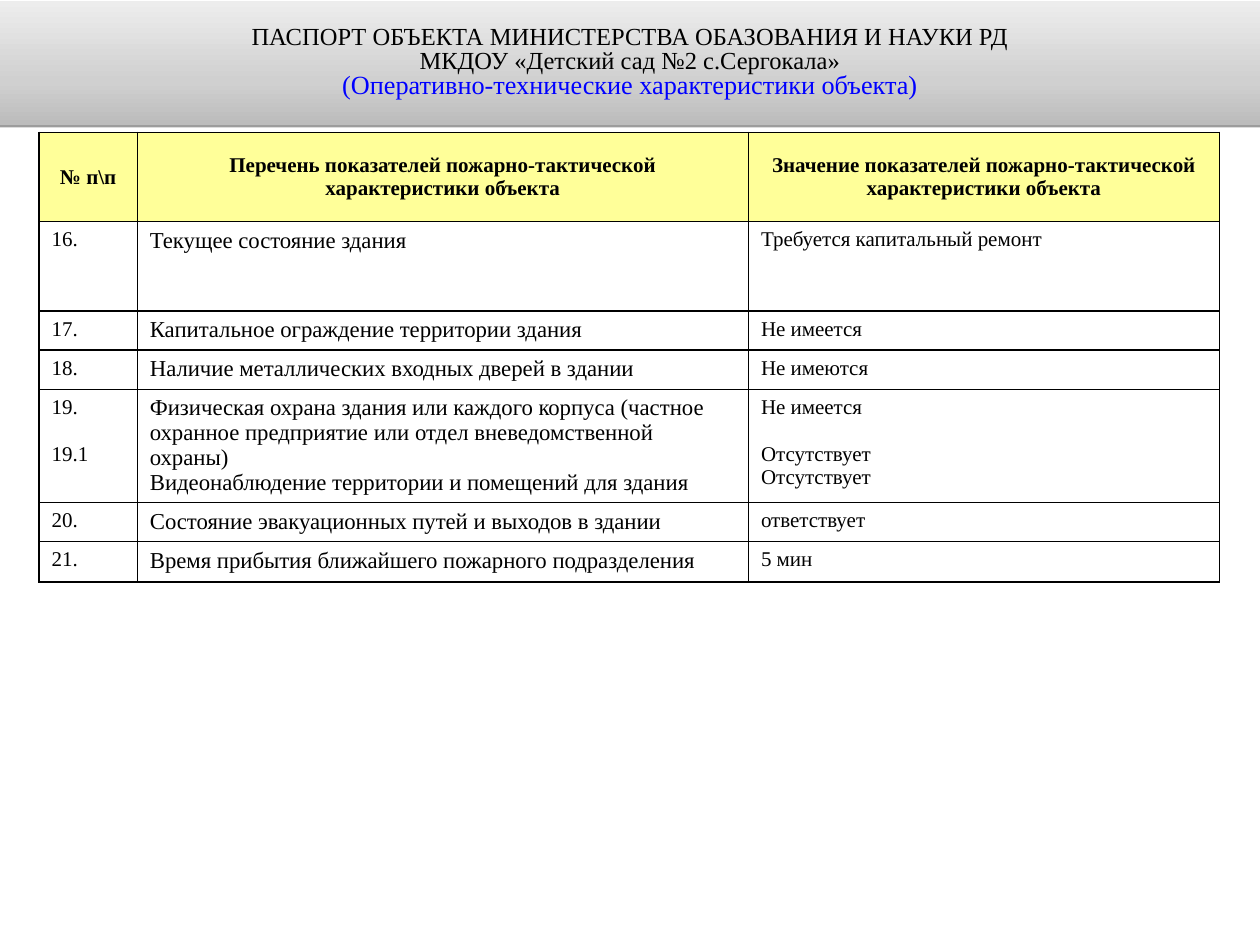
from copy import deepcopy

from lxml import etree
from pptx import Presentation
from pptx.dml.color import RGBColor
from pptx.enum.shapes import MSO_SHAPE
from pptx.enum.text import MSO_ANCHOR, PP_ALIGN
from pptx.oxml import parse_xml
from pptx.oxml.ns import nsdecls, qn
from pptx.util import Inches, Pt

RECTANGLE = MSO_SHAPE.RECTANGLE
TOP, MIDDLE = MSO_ANCHOR.TOP, MSO_ANCHOR.MIDDLE
LEFT, CENTER = PP_ALIGN.LEFT, PP_ALIGN.CENTER

BLACK = RGBColor(0x00, 0x00, 0x00)
BLUE = RGBColor(0x00, 0x00, 0xFF)
WHITE = RGBColor(0xFF, 0xFF, 0xFF)
YELLOW = RGBColor(0xFF, 0xFF, 0x99)
BANNER_STOPS = [
    (0, RGBColor(0xBC, 0xBC, 0xBC)),
    (0.35, RGBColor(0xD0, 0xD0, 0xD0)),
    (1, RGBColor(0xED, 0xED, 0xED)),
]
FONT = "Times New Roman"
BLANK_LINE = 13.4

COLUMN_WIDTHS = [0.78, 4.85, 3.74]
ROW_HEIGHTS = [0.71, 0.71, 0.31, 0.31, 0.9, 0.31, 0.32]
HEADINGS = [
    "№ п\\п",
    "Перечень показателей пожарно-тактической характеристики объекта",
    "Значение показателей пожарно-тактической характеристики объекта",
]
# Each cell is a list of paragraphs: text, or (text, space before in points)
ROWS = [
    (["16."], ["Текущее состояние здания"], ["Требуется капитальный ремонт"]),
    (["17."], ["Капитальное ограждение территории здания"], ["Не имеется"]),
    (["18."], ["Наличие металлических входных дверей в здании"], ["Не имеются"]),
    (
        ["19.", ("19.1", BLANK_LINE)],
        [
            "Физическая охрана здания или каждого корпуса (частное охранное "
            "предприятие или отдел вневедомственной охраны)",
            "Видеонаблюдение территории и помещений для здания",
        ],
        ["Не имеется", ("Отсутствует", BLANK_LINE), "Отсутствует"],
    ),
    (["20."], ["Состояние эвакуационных путей и выходов в здании"], ["ответствует"]),
    (["21."], ["Время прибытия ближайшего пожарного подразделения"], ["5 мин"]),
]


def write(frame, text, first=False, size=12, color=BLACK, bold=False,
          align=LEFT, line_spacing=None, before=0):
    """Write one formatted paragraph into a text frame."""
    para = frame.paragraphs[0] if first else frame.add_paragraph()
    para.alignment = align
    para.space_before = Pt(before)
    if line_spacing:
        para.line_spacing = line_spacing
    span = para.add_run()
    span.text = text
    span.font.name = FONT
    span.font.size = Pt(size)
    span.font.bold = bold
    span.font.color.rgb = color


def fill_gradient(shape, stops):
    """Fill a shape with a gradient that runs from bottom to top."""
    shape.fill.gradient()
    shape.fill.gradient_angle = 90
    stop_list = shape.element.spPr.find(".//" + qn("a:gs")).getparent()
    stop_list.append(deepcopy(stop_list[-1]))
    for stop, (position, color) in zip(shape.fill.gradient_stops, stops):
        stop.color.rgb = color
        stop.position = position


def add_shadow(shape):
    """Give a shape a sharp shadow straight below it."""
    shape.shadow.inherit = False
    effects = shape.element.spPr.find(qn("a:effectLst"))
    effects.append(parse_xml(
        f'<a:outerShdw {nsdecls("a")} blurRad="0" dist="{Pt(1.6)}" dir="5400000" '
        'rotWithShape="0"><a:srgbClr val="000000"><a:alpha val="38000"/>'
        "</a:srgbClr></a:outerShdw>"))


def add_borders(cell):
    """Draw a thin black line on each side of a cell."""
    properties = cell._tc.get_or_add_tcPr()
    for side in ("lnL", "lnR", "lnT", "lnB"):
        line = etree.SubElement(properties, qn(f"a:{side}"), w=str(Pt(1)))
        paint = etree.SubElement(line, qn("a:solidFill"))
        etree.SubElement(paint, qn("a:srgbClr"), val=str(BLACK))


def format_cell(cell, fill, anchor):
    add_borders(cell)
    cell.fill.solid()
    cell.fill.fore_color.rgb = fill
    cell.vertical_anchor = anchor
    cell.margin_left = cell.margin_right = Inches(0.1)
    cell.margin_top = cell.margin_bottom = Inches(0.05)


def add_indicator_table(page, left, top, width, height):
    table = page.shapes.add_table(
        len(ROW_HEIGHTS), len(COLUMN_WIDTHS), Inches(left), Inches(top),
        Inches(width), Inches(height)).table
    for column, column_width in zip(table.columns, COLUMN_WIDTHS):
        column.width = Inches(column_width)
    for row, row_height in zip(table.rows, ROW_HEIGHTS):
        row.height = Inches(row_height)

    # Heading row
    for index, heading in enumerate(HEADINGS):
        cell = table.cell(0, index)
        format_cell(cell, YELLOW, MIDDLE)
        write(cell.text_frame, heading, first=True, bold=True, align=CENTER)

    # Indicator rows
    for row_index, row in enumerate(ROWS, start=1):
        for column_index, paragraphs in enumerate(row):
            cell = table.cell(row_index, column_index)
            format_cell(cell, WHITE, TOP)
            size = 13 if column_index == 1 else 12
            for number, item in enumerate(paragraphs):
                text, before = (item, 0) if isinstance(item, str) else item
                write(cell.text_frame, text, first=number == 0, size=size,
                      before=before)


def add_banner(page, left, top, width, height):
    box = page.shapes.add_shape(RECTANGLE, Inches(left), Inches(top),
                                Inches(width), Inches(height))
    fill_gradient(box, BANNER_STOPS)
    box.line.fill.background()
    add_shadow(box)

    # Title lines
    frame = box.text_frame
    frame.word_wrap = True
    frame.vertical_anchor = MIDDLE
    frame.margin_left = frame.margin_right = Inches(0.09)
    frame.margin_top = frame.margin_bottom = Inches(0.04)
    title = {"align": CENTER, "line_spacing": 0.8}
    write(frame, "ПАСПОРТ ОБЪЕКТА МИНИСТЕРСТВА ОБАЗОВАНИЯ И НАУКИ РД",
          first=True, size=14, **title)
    write(frame, "МКДОУ «Детский сад №2 с.Сергокала»", size=14, **title)
    write(frame, "(Оперативно-технические характеристики объекта)",
          size=15, color=BLUE, **title)


def main():
    deck = Presentation()
    deck.slide_width, deck.slide_height = Inches(10), Inches(7.5)
    page = deck.slides.add_slide(deck.slide_layouts[6])
    add_indicator_table(page, 0.31, 1.05, sum(COLUMN_WIDTHS), sum(ROW_HEIGHTS))
    add_banner(page, 0, 0.01, 10, 0.98)
    deck.save("out.pptx")


if __name__ == "__main__":
    main()
